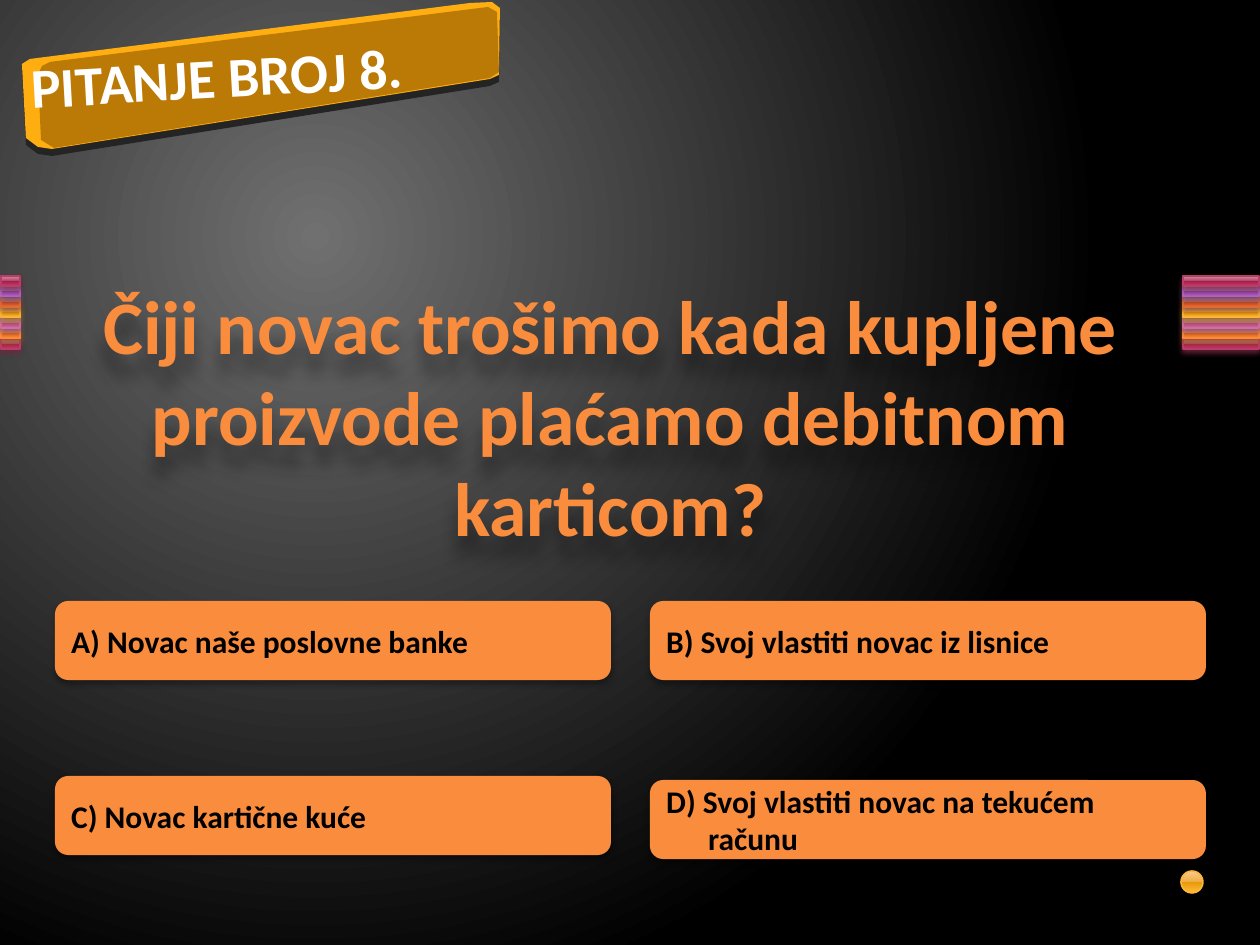
"""Builds a quiz slide: a tilted number plate, a question and four answers."""
from dataclasses import dataclass

from lxml.etree import SubElement
from pptx import Presentation
from pptx.dml.color import RGBColor
from pptx.enum.shapes import MSO_SHAPE
from pptx.enum.text import MSO_ANCHOR, PP_ALIGN
from pptx.oxml import parse_xml
from pptx.oxml.ns import nsdecls, qn
from pptx.util import Pt

PX = 914400 / 126


@dataclass(frozen=True)
class Theme:
    font: str = "Calibri"
    accent: str = "FA8D3D"
    plate_face: str = "BB7A06"
    plate_side: str = "FFAE12"
    plate_shadow: str = "242424"
    light: str = "FFFFFF"
    dark: str = "000000"
    glow: str = "707070"
    number_size: float = 32
    question_size: float = 43.2
    answer_size: float = 18


THEME = Theme()
NUMBER = "PITANJE BROJ 8."
QUESTION = "Čiji novac trošimo kada kupljene proizvode plaćamo debitnom karticom?"
ANSWERS = [
    (55, 601, ["A) Novac naše poslovne banke"]),
    (650, 601, ["B) Svoj vlastiti novac iz lisnice"]),
    (55, 776, ["C) Novac kartične kuće"]),
    (650, 780, ["D) Svoj vlastiti novac na tekućem", "računu"]),
]
ANSWER_SIZE = (556, 79)
HANGING_INDENT = 42

GLOSS_STOPS = (0, 49, 49, 92, 100)
GLOSSES = {
    "berry": ("B83D68", "722640", "CE94A2 B34869 A61749 C13764 CA5D7C"),
    "violet": ("AC66BB", "6A3F73", "C6A2D0 A666B4 8F3EA1 AD5DBF BA76CA"),
    "rust": ("DE6C36", "894321", "E7A493 D66B42 CC4809 E9642C F07B55"),
    "gold": ("F9B639", "9A7023", "FBCC93 EFAE43 E59807 FFB432 FFBE5F"),
    "pink": ("CF6DA4", "804365", "DDA4C1 C66B9D B34181 D361A0 DC79AE"),
    "orange": ("FA8D3D", "9A5726", "FBB494 F08745 E5670B FF8736 FF9961"),
}
STRIPES = ["berry", "violet", "rust", "gold", "pink", "orange", "berry"]
STRIPE_COLUMNS = [(1, 19), (1183, 76)]
STRIPE_TOP, STRIPE_STEP, STRIPE_HEIGHT = 276, 10.5, 10

PLATE_BODY = [(22, 64), (30, 59), (470, 3), (492, 2), (500, 8), (499, 75),
              (490, 79), (52, 149), (38, 147), (26, 138)]
PLATE_FACE = [(38, 75), (42, 66), (50, 62), (488, 7), (497, 12), (499, 72),
              (490, 78), (54, 148), (41, 140)]


def px(*lengths):
    return [round(length * PX) for length in lengths]


def gradient(stops, direction):
    marks = "".join(
        f'<a:gs pos="{place * 1000}"><a:srgbClr val="{color}"/></a:gs>'
        for place, color in stops)
    return parse_xml(f'<a:gradFill {nsdecls("a")} rotWithShape="1">'
                     f'<a:gsLst>{marks}</a:gsLst>{direction}</a:gradFill>')


def replace_gradient(holder, new):
    holder.replace(holder.find(qn("a:gradFill")), new)


def cast_shadow(shape, color, alpha, blur, distance, angle=90):
    shape.shadow.inherit = False
    effects = shape._element.spPr.find(qn("a:effectLst"))
    outer = SubElement(effects, qn("a:outerShdw"), blurRad=str(Pt(blur)),
                       dist=str(Pt(distance)), dir=str(angle * 60000),
                       algn="ctr", rotWithShape="0")
    tint = SubElement(outer, qn("a:srgbClr"), val=color)
    SubElement(tint, qn("a:alpha"), val=str(alpha * 1000))


def paint(shape, color):
    shape.fill.solid()
    shape.fill.fore_color.rgb = RGBColor.from_string(color)
    shape.line.fill.background()
    shape.shadow.inherit = False


def write(shape, lines, size, color, align=PP_ALIGN.LEFT):
    frame = shape.text_frame
    frame.word_wrap = True
    frame.vertical_anchor = MSO_ANCHOR.MIDDLE
    frame.text = "\n".join(lines)
    for paragraph in frame.paragraphs:
        paragraph.alignment = align
        for run in paragraph.runs:
            run.font.name = THEME.font
            run.font.size = Pt(size)
            run.font.bold = True
            run.font.color.rgb = RGBColor.from_string(color)
    for continuation in frame.paragraphs[1:]:
        continuation._p.get_or_add_pPr().set("marL", str(px(HANGING_INDENT)[0]))


def add_glossy(slide, preset, box, gloss):
    edge, shade, colors = GLOSSES[gloss]
    shape = slide.shapes.add_shape(preset, *px(*box))
    shape.fill.gradient()
    replace_gradient(shape._element.spPr, gradient(
        zip(GLOSS_STOPS, colors.split()), '<a:lin ang="5400000" scaled="0"/>'))
    shape.line.color.rgb = RGBColor.from_string(edge)
    shape.line.width = Pt(0.9)
    shape.shadow.inherit = False
    return shape, shade


def add_outline(slide, points, color):
    builder = slide.shapes.build_freeform(*points[0], scale=PX)
    builder.add_line_segments(points[1:], close=True)
    outline = builder.convert_to_shape()
    paint(outline, color)
    return outline


def add_background(slide):
    slide.background.fill.gradient()
    center = ('<a:path path="circle">'
              '<a:fillToRect l="50000" t="50000" r="100000" b="100000"/></a:path>')
    replace_gradient(slide._element.cSld.bg.bgPr, gradient(
        [(0, THEME.glow), (100, THEME.dark)], center))


def add_stripes(slide):
    for left, width in STRIPE_COLUMNS:
        for row, gloss in reversed(list(enumerate(STRIPES))):
            box = (left, STRIPE_TOP + row * STRIPE_STEP, width, STRIPE_HEIGHT)
            stripe, shade = add_glossy(slide, MSO_SHAPE.RECTANGLE, box, gloss)
            cast_shadow(stripe, shade, 83, 3.1, 2)


def add_number_plate(slide):
    body = add_outline(slide, PLATE_BODY, THEME.plate_side)
    cast_shadow(body, THEME.plate_shadow, 100, 0, 4)
    add_outline(slide, PLATE_FACE, THEME.plate_face)
    number = slide.shapes.add_textbox(*px(18, 32, 556, 79))
    number.rotation = -3.2
    write(number, [NUMBER], THEME.number_size, THEME.light)


def add_question(slide):
    question = slide.shapes.add_textbox(*px(15, 267, 1191, 297))
    write(question, [QUESTION], THEME.question_size, THEME.accent, PP_ALIGN.CENTER)
    cast_shadow(question, THEME.dark, 40, 10, 12)


def add_answers(slide):
    for left, top, lines in ANSWERS:
        answer = slide.shapes.add_shape(
            MSO_SHAPE.ROUNDED_RECTANGLE, *px(left, top, *ANSWER_SIZE))
        paint(answer, THEME.accent)
        cast_shadow(answer, THEME.dark, 32, 3.5, 2.2)
        write(answer, lines, THEME.answer_size, THEME.dark)


def main():
    deck = Presentation()
    deck.slide_width, deck.slide_height = px(1260, 945)
    slide = deck.slides.add_slide(deck.slide_layouts[6])
    add_background(slide)
    add_stripes(slide)
    add_glossy(slide, MSO_SHAPE.OVAL, (1181, 871, 22, 22), "gold")
    add_number_plate(slide)
    add_question(slide)
    add_answers(slide)
    deck.save("out.pptx")


if __name__ == "__main__":
    main()
